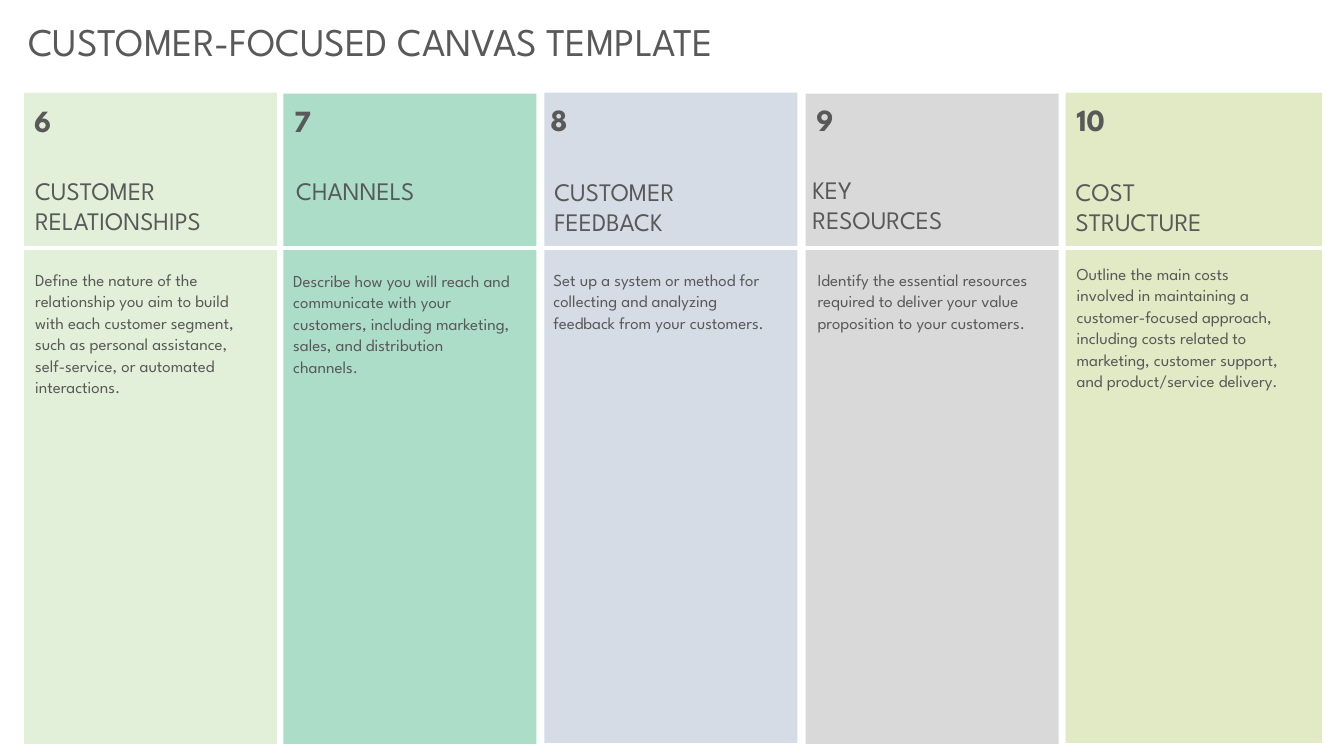
"""Build the customer-focused canvas slide with five numbered columns."""
from pptx import Presentation
from pptx.dml.color import RGBColor
from pptx.enum.shapes import MSO_CONNECTOR, MSO_SHAPE
from pptx.enum.text import MSO_ANCHOR, MSO_AUTO_SIZE, PP_ALIGN
from pptx.oxml.ns import qn
from pptx.util import Pt
from lxml import etree

RECT, LINE = MSO_SHAPE.RECTANGLE, MSO_CONNECTOR.STRAIGHT
TOP, LEFT, NO_FIT = MSO_ANCHOR.TOP, PP_ALIGN.LEFT, MSO_AUTO_SIZE.NONE
PX = 9144
FONT = "League Spartan"
COLORS = {"text": "595959", "divider": "FFFFFF", "lime": "E1E9C5", "mint": "ABDDC9",
          "blue": "D6DCE5", "green": "E2F0D9", "gray": "D9D9D9"}

TITLE = "CUSTOMER-FOCUSED CANVAS TEMPLATE"
COLUMNS = [
    {"color": "green", "panel": (24, 92, 251, 646),
     "number": ("6", (24, 93, 46, 64)),
     "heading": ("CUSTOMER RELATIONSHIPS", (25, 169, 250, 71)),
     "body": ("Define the nature of the relationship you aim to build with each customer "
              "segment, such as personal assistance, self-service, or automated "
              "interactions.", (25, 261, 238, 157))},
    {"color": "mint", "panel": (281, 93, 251, 645),
     "number": ("7", (282, 93, 46, 64)),
     "heading": ("CHANNELS", (284, 169, 250, 40)),
     "body": ("Describe how you will reach and communicate with your customers, including "
              "marketing, sales, and distribution channels.", (281, 262, 235, 157))},
    {"color": "blue", "panel": (540, 92, 251, 645),
     "number": ("8", (536, 92, 46, 64)),
     "heading": ("CUSTOMER\nFEEDBACK", (540, 170, 250, 71)),
     "body": ("Set up a system or method for collecting and analyzing feedback from your "
              "customers.", (539, 261, 235, 157))},
    {"color": "gray", "panel": (799, 93, 251, 645),
     "number": ("9", (800, 92, 46, 64)),
     "heading": ("KEY\nRESOURCES", (796, 168, 250, 71)),
     "body": ("Identify the essential resources required to deliver your value proposition "
              "to your customers.", (801, 261, 238, 157))},
    {"color": "lime", "panel": (1057, 92, 254, 645),
     "number": ("10", (1058, 92, 60, 64)),
     "heading": ("COST\nSTRUCTURE", (1057, 170, 245, 71)),
     "body": ("Outline the main costs involved in maintaining a customer-focused approach, "
              "including costs related to marketing, customer support, and product/service "
              "delivery.", (1058, 255, 225, 157))},
]
STYLES = {"number": (22, True, 1.07, 8), "heading": (18, False, 1, 0),
          "body": (12, False, 1.07, 8)}


def rgb(name):
    return RGBColor.from_string(COLORS[name])


def emu(box):
    return [v * PX for v in box]


def write(sp, text, size, bold=False, spacing=1, after=0):
    tf = sp.text_frame
    tf.word_wrap, tf.auto_size, tf.vertical_anchor = True, NO_FIT, TOP
    p = tf.paragraphs[0]
    p.alignment, p.line_spacing, p.space_after = LEFT, spacing, Pt(after)
    for i, line in enumerate(text.split("\n")):
        if i:
            p.add_line_break()
        r = p.add_run()
        r.text = line
        r.font.name, r.font.size, r.font.bold = FONT, Pt(size), bold
        r.font.color.rgb = rgb("text")


def main():
    prs = Presentation()
    prs.slide_width, prs.slide_height = emu((1333, 750))
    s = prs.slides.add_slide(prs.slide_layouts[5])

    title = s.shapes.title
    title.left, title.top, title.width, title.height = emu((18, 12, 1295, 57))
    write(title, TITLE, 28)

    for col in COLUMNS:
        panel = s.shapes.add_shape(RECT, *emu(col["panel"]))
        panel.shadow.inherit = False
        panel.fill.solid()
        panel.fill.fore_color.rgb = rgb(col["color"])
        panel.line.fill.background()

    divider = s.shapes.add_connector(LINE, *emu((24, 246, 1320, 246)))
    divider.line.color.rgb = rgb("divider")
    divider.line.width = Pt(2.25)
    etree.SubElement(divider.line._get_or_add_ln().getparent(), qn("a:effectLst"))

    for part, style in STYLES.items():
        for col in COLUMNS:
            text, box = col[part]
            write(s.shapes.add_textbox(*emu(box)), text, *style)

    prs.save("out.pptx")


if __name__ == "__main__":
    main()
